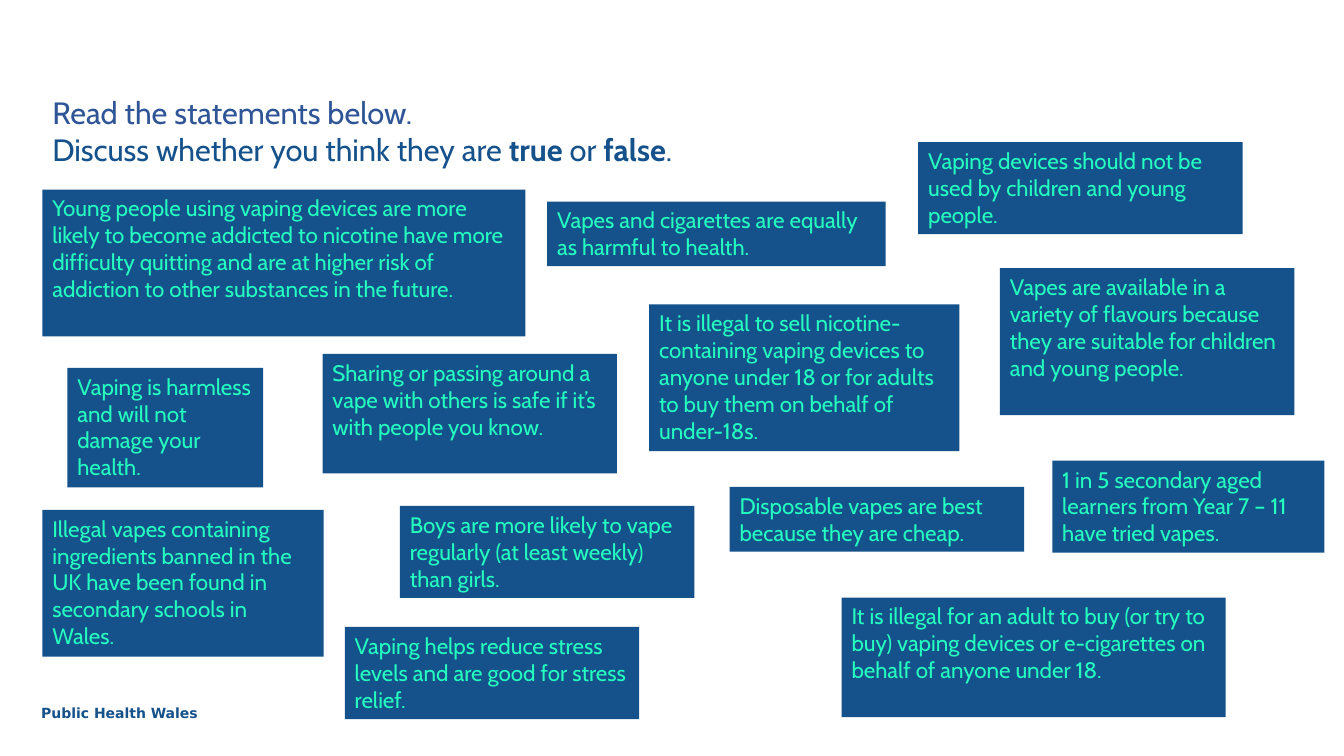
"""Build the vaping true-or-false statements slide."""
from pptx import Presentation
from pptx.dml.color import RGBColor
from pptx.enum.shapes import MSO_SHAPE
from pptx.enum.text import MSO_ANCHOR, MSO_AUTO_SIZE, PP_ALIGN
from pptx.util import Cm, Pt

NAVY, BLUE, MINT = "15518B", "2F5597", "24FFC0"
LINE_HEIGHT, CARD_PADDING = 0.69, 0.25

STATEMENTS = [
    (23.14, 3.58, 8.18, 3, "Vaping devices should not be used by children and young people."),
    (16.36, 7.67, 7.82, 5, "It is illegal to sell nicotine-containing vaping devices to anyone "
                           "under 18 or for adults to buy them on behalf of under-18s."),
    (21.21, 15.06, 9.68, 4, "It is illegal for an adult to buy (or try to buy) vaping devices or "
                            "e-cigarettes on behalf of anyone under 18."),
    (1.07, 4.78, 12.17, 5, "Young people using vaping devices are more likely to become addicted "
                           "to nicotine have more difficulty quitting and are at higher risk of "
                           "addiction to other substances in the future."),
    (1.07, 12.85, 7.09, 5, "Illegal vapes containing ingredients banned in the UK have been found "
                           "in secondary schools in Wales."),
    (26.52, 11.61, 6.86, 3, "1 in 5 secondary aged learners from Year 7 – 11 have tried vapes."),
    (1.7, 9.27, 4.93, 4, "Vaping is harmless and will not damage your health."),
    (25.2, 6.76, 7.42, 5, "Vapes are available in a variety of flavours because they are suitable "
                          "for children and young people."),
    (8.69, 15.8, 7.42, 3, "Vaping helps reduce stress levels and are good for stress relief."),
    (13.79, 5.08, 8.53, 2, "Vapes and cigarettes are equally as harmful to health."),
    (10.08, 12.75, 7.42, 3, "Boys are more likely to vape regularly (at least weekly) than girls."),
    (8.13, 8.92, 7.42, 4, "Sharing or passing around a vape with others is safe if it’s with "
                          "people you know."),
    (18.39, 12.27, 7.42, 2, "Disposable vapes are best because they are cheap."),
]


def color(value):
    return RGBColor.from_string(value)


class StatementSlide:
    def __init__(self, slide, font="Cabin"):
        self.slide = slide
        self.font = font

    def style(self, paragraph, size, shade, font=None, bold=None):
        paragraph.alignment = PP_ALIGN.LEFT
        paragraph.font.name = font or self.font
        paragraph.font.size = Pt(size)
        paragraph.font.bold = bold
        paragraph.font.color.rgb = color(shade)

    def card(self, left, top, width, lines, text):
        height = CARD_PADDING + LINE_HEIGHT * lines
        shape = self.slide.shapes.add_shape(
            MSO_SHAPE.RECTANGLE, Cm(left), Cm(top), Cm(width), Cm(height))
        shape.shadow.inherit = False
        shape.fill.solid()
        shape.fill.fore_color.rgb = color(NAVY)
        shape.line.fill.background()
        frame = shape.text_frame
        frame.word_wrap = True
        frame.auto_size = MSO_AUTO_SIZE.SHAPE_TO_FIT_TEXT
        frame.vertical_anchor = MSO_ANCHOR.TOP
        frame.text = text
        self.style(frame.paragraphs[0], 16, MINT)

    def text_box(self, left, top, width, height):
        box = self.slide.shapes.add_textbox(Cm(left), Cm(top), Cm(width), Cm(height))
        box.text_frame.word_wrap = True
        return box.text_frame

    def heading(self, opening, question):
        frame = self.text_box(1.07, 3.23, 27.1, 1.12)
        frame.vertical_anchor = MSO_ANCHOR.BOTTOM
        frame.text = opening
        self.style(frame.paragraphs[0], 22, BLUE)
        paragraph = frame.add_paragraph()
        self.style(paragraph, 22, NAVY)
        for text, bold in question:
            run = paragraph.add_run()
            run.text = text
            run.font.bold = bold

    def footer(self, text):
        frame = self.text_box(0.79, 17.63, 4.6, 0.69)
        frame.auto_size = MSO_AUTO_SIZE.SHAPE_TO_FIT_TEXT
        frame.text = text
        self.style(frame.paragraphs[0], 10, NAVY, "DejaVu Sans", True)


def main():
    presentation = Presentation()
    presentation.slide_width, presentation.slide_height = Cm(33.87), Cm(19.05)
    page = StatementSlide(presentation.slides.add_slide(presentation.slide_layouts[6]))
    page.footer("Public Health Wales")
    for statement in STATEMENTS:
        page.card(*statement)
    page.heading("Read the statements below.", [
        ("Discuss whether you think they are ", False), ("true", True),
        (" or ", False), ("false", True), (".", False)])
    presentation.save("out.pptx")


if __name__ == "__main__":
    main()
